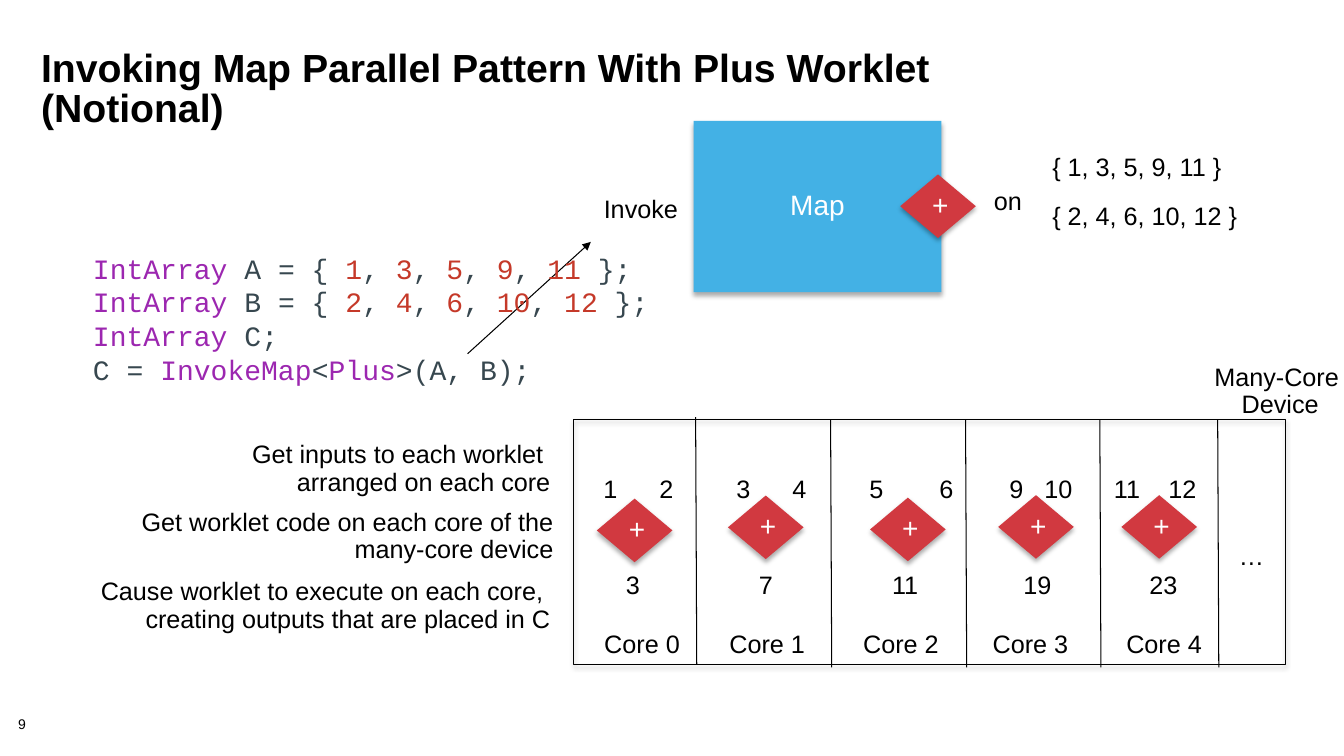
"""Build the slide on invoking a parallel map with a plus worklet."""
from lxml import etree
from pptx import Presentation
from pptx.dml.color import RGBColor
from pptx.enum import shapes, text
from pptx.oxml import ns
from pptx.util import Pt

BLACK = RGBColor(0x00, 0x00, 0x00)
WHITE = RGBColor(0xFF, 0xFF, 0xFF)
BLUE = RGBColor(0x43, 0xB1, 0xE5)
RED = RGBColor(0xD1, 0x39, 0x40)
PURPLE = RGBColor(0x9C, 0x27, 0xB0)
SLATE = RGBColor(0x37, 0x47, 0x4F)
BRICK = RGBColor(0xC5, 0x39, 0x29)

LEFT, CENTER, RIGHT = text.PP_ALIGN.LEFT, text.PP_ALIGN.CENTER, text.PP_ALIGN.RIGHT
SHAPE = shapes.MSO_SHAPE

# Each core: (input centre, value) pairs, worklet centre and top, output, label centre.
CORES = [
    (((436, 1), (476, 2)), (453.3, 356.2), (452, 3), 458.6),
    (((531, 3), (571, 4)), (547, 354), (547, 7), 548),
    (((626, 5), (676, 6)), (648.5, 355.5), (646.5, 11), 643.5),
    (((726, 9), (756, 10)), (740, 353.7), (741, 19), 736),
    (((805, 11), (844.5, 12)), (828, 353.7), (831, 23), 831.5),
]
DIVIDERS = [(496.9, 298), (593.3, 300), (689.7, 300), (785.6, 300), (869.8, 300)]


def style_font(font, size, color, name="Arial", bold=False):
    """Set the face, size, weight and colour of a font."""
    font.name, font.size, font.bold = name, Pt(size), bold
    font.color.rgb = color


def set_insets(frame, side, end):
    """Set the horizontal and vertical insets of a text frame."""
    frame.margin_left = frame.margin_right = Pt(side)
    frame.margin_top = frame.margin_bottom = Pt(end)


def add_label(slide, box, content, align=LEFT, size=18, spacing=0.9, bold=False,
              insets=(9.36, 7.2), anchor=text.MSO_ANCHOR.MIDDLE):
    """Add unwrapped black text."""
    frame = slide.shapes.add_textbox(*map(Pt, box)).text_frame
    frame.word_wrap = False
    frame.vertical_anchor = anchor
    set_insets(frame, *insets)
    frame.text = content
    for paragraph in frame.paragraphs:
        paragraph.alignment = align
        paragraph.line_spacing = spacing
        for run in paragraph.runs:
            style_font(run.font, size, BLACK, bold=bold)


def add_centred(slide, center, top, content):
    """Add a one-line label centred on a horizontal position."""
    add_label(slide, (center - 37, top, 74, 33.8), content, CENTER)


def add_block(slide, kind, box, fill=None, caption=""):
    """Add a softly shadowed shape, outlined when it has no fill."""
    block = slide.shapes.add_shape(kind, *map(Pt, box))
    block.shadow.inherit = False
    if fill is None:
        block.fill.background()
        block.line.color.rgb = BLACK
        block.line.width = Pt(0.75)
    else:
        block.fill.solid()
        block.fill.fore_color.rgb = fill
        block.line.fill.background()
    effects = block.element.spPr.find(ns.qn("a:effectLst"))
    shadow = etree.SubElement(effects, ns.qn("a:outerShdw"), blurRad=str(Pt(3.5)),
                              dist=str(Pt(2.2)), dir="5400000", rotWithShape="0")
    tint = etree.SubElement(shadow, ns.qn("a:srgbClr"), val=str(BLACK))
    etree.SubElement(tint, ns.qn("a:alpha"), val="32000")
    if caption:
        frame = block.text_frame
        frame.vertical_anchor = text.MSO_ANCHOR.MIDDLE
        set_insets(frame, 9.36, 5)
        frame.text = caption
        paragraph = frame.paragraphs[0]
        paragraph.alignment = CENTER
        paragraph.line_spacing = 0.9
        style_font(paragraph.runs[0].font, 20, WHITE)


def add_worklet(slide, center, top):
    """Add a plus worklet diamond."""
    add_block(slide, SHAPE.DIAMOND, (center - 27, top, 54, 45.4), RED, "+")


def add_line(slide, start, end, arrow=False):
    """Add a thin black line, with an arrowhead at its end if asked."""
    line = slide.shapes.add_connector(shapes.MSO_CONNECTOR.STRAIGHT,
                                      *map(Pt, start + end))
    line.line.color.rgb = BLACK
    line.line.width = Pt(0.75)
    if arrow:
        etree.SubElement(line.line._get_or_add_ln(), ns.qn("a:tailEnd"), type="triangle")
    etree.SubElement(line.element.spPr, ns.qn("a:effectLst"))


def array_tokens(name, values):
    """Return the coloured tokens of an array declaration."""
    tokens = [("IntArray", PURPLE), (f" {name} = {{ ", SLATE)]
    for value in values:
        tokens += [(str(value), BRICK), (", ", SLATE)]
    return tokens[:-1] + [(" };", SLATE)]


def add_code(slide, box, lines):
    """Add code lines made of coloured tokens."""
    frame = slide.shapes.add_textbox(*map(Pt, box)).text_frame
    frame.word_wrap = False
    frame.vertical_anchor = text.MSO_ANCHOR.MIDDLE
    set_insets(frame, 4.5, 4.5)
    for index, tokens in enumerate(lines):
        paragraph = frame.add_paragraph() if index else frame.paragraphs[0]
        for token, color in tokens:
            run = paragraph.add_run()
            run.text = token
            style_font(run.font, 20, color, "Courier New")


def add_device(slide):
    """Add the many-core device with its cores, worklets and values."""
    add_block(slide, SHAPE.RECTANGLE, (409.7, 299.5, 508.3, 175))
    for x, top in DIVIDERS:
        add_line(slide, (x, top), (x + 0.8, top + 176.7))
    add_label(slide, (875.5, 380.9, 36.7, 33.8), "…")
    add_label(slide, (857.5, 252.7, 113.8, 54), "Many-Core \nDevice", CENTER)
    for number, (inputs, worklet, (output_x, output), label_x) in enumerate(CORES):
        add_worklet(slide, *worklet)
        for x, value in inputs:
            add_centred(slide, x, 333.4, str(value))
        add_centred(slide, output_x, 401.8, str(output))
        add_centred(slide, label_x, 444.2, f"Core {number}")


def add_invocation(slide):
    """Add the map block, its worklet and the arrays it is invoked on."""
    add_block(slide, SHAPE.RECTANGLE, (495.4, 86.4, 177.1, 122.4), BLUE, "Map")
    add_worklet(slide, 670, 124.6)
    add_line(slide, (334, 252.7), (422, 172.8), arrow=True)
    add_label(slide, (421.9, 133.2, 72.7, 33.8), "Invoke")
    add_label(slide, (700.6, 127.4, 38.9, 33.8), "on")
    add_label(slide, (742.3, 100.8, 146.2, 36), "{ 1, 3, 5, 9, 11 }", spacing=1.0)
    add_label(slide, (742.3, 136.1, 151.9, 36), "{ 2, 4, 6, 10, 12 }", spacing=1.0)


def main():
    """Build and save the slide."""
    deck = Presentation()
    deck.slide_width, deck.slide_height = Pt(960), Pt(540)
    slide = deck.slides.add_slide(deck.slide_layouts[6])
    add_label(slide, (13, 512.6, 40.3, 11.5), "9", size=10, insets=(0, 0),
              anchor=text.MSO_ANCHOR.TOP)
    add_label(slide, (22.3, 32.4, 895.7, 72),
              "Invoking Map Parallel Pattern With Plus Worklet\v(Notional)", size=28,
              spacing=0.85, bold=True, insets=(7.2, 3.6), anchor=text.MSO_ANCHOR.TOP)
    add_device(slide)
    add_invocation(slide)
    add_label(slide, (168.5, 308.2, 234, 54),
              "Get inputs to each worklet \narranged on each core", RIGHT)
    add_label(slide, (85, 356.4, 319.7, 54),
              "Get worklet code on each core of the\nmany-core device", RIGHT)
    add_label(slide, (59.8, 406.1, 342.7, 54),
              "Cause worklet to execute on each core, \ncreating outputs that are placed in C",
              RIGHT)
    add_code(slide, (61.9, 175, 408.2, 105.1), [
        array_tokens("A", (1, 3, 5, 9, 11)),
        array_tokens("B", (2, 4, 6, 10, 12)),
        [("IntArray", PURPLE), (" C;", SLATE)],
        [("C = ", SLATE), ("InvokeMap", PURPLE), ("<", SLATE), ("Plus", PURPLE),
         (">(A, B);", SLATE)],
    ])
    deck.save("out.pptx")


if __name__ == "__main__":
    main()
